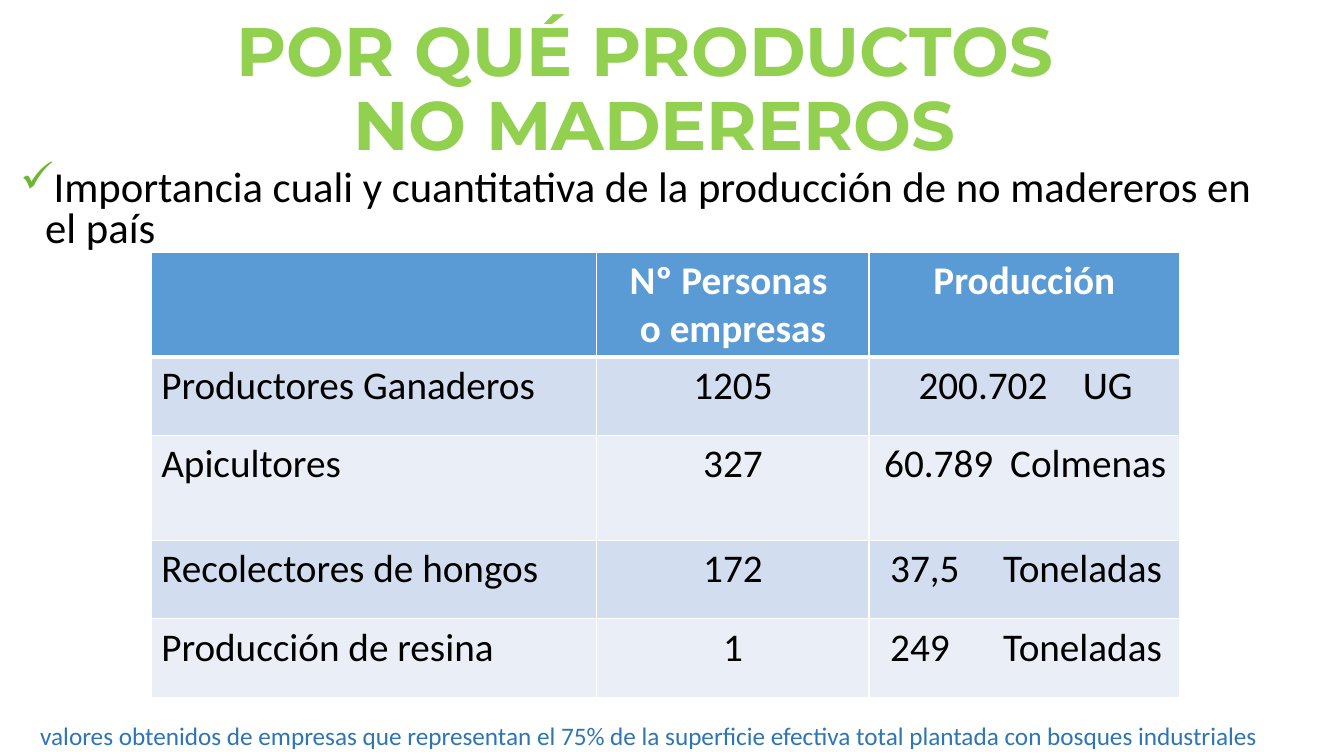
from dataclasses import dataclass

from lxml import etree
from pptx import Presentation
from pptx import util as u
from pptx.dml.color import RGBColor
from pptx.enum import text
from pptx.oxml import ns

PX = 9144

WHITE = RGBColor(0xFF, 0xFF, 0xFF)
BLACK = RGBColor(0x00, 0x00, 0x00)
LIME = RGBColor(0x92, 0xD0, 0x50)
CHECK_GREEN = RGBColor(0x6F, 0xB6, 0x34)
NOTE_BLUE = RGBColor(0x2E, 0x75, 0xB6)
HEADER_BLUE = RGBColor(0x5B, 0x9B, 0xD5)
BANDS = (RGBColor(0xD2, 0xDE, 0xEF), RGBColor(0xEA, 0xEF, 0xF7))


@dataclass(frozen=True)
class Style:
    size: float
    color: RGBColor
    font: str = "Calibri"
    bold: bool = False


@dataclass(frozen=True)
class Block:
    left: int
    top: int
    width: int
    height: int
    lines: tuple[str, ...]
    style: Style
    spacing: float = 1.0
    align: text.PP_ALIGN = text.PP_ALIGN.LEFT
    anchor: text.MSO_ANCHOR = text.MSO_ANCHOR.TOP


@dataclass(frozen=True)
class Producer:
    name: str
    count: str
    amount: str
    unit: str
    amount_left: int
    unit_left: int
    height: int = 78


HEADER_STYLE = Style(28, WHITE, bold=True)
BODY_STYLE = Style(28, BLACK)

TITLE = Block(74, 18, 1150, 145, ("POR QUÉ PRODUCTOS ", "NO MADEREROS"),
              Style(49, LIME, "Montserrat", True), 0.9,
              text.PP_ALIGN.CENTER, text.MSO_ANCHOR.MIDDLE)
IMPORTANCE = Block(10, 163, 1249, 142,
                   ("Importancia cuali y cuantitativa de la producción de no madereros en el país",),
                   Style(30.5, BLACK), 0.8)
NOTE = Block(30, 710, 1261, 40,
             ("valores obtenidos de empresas que representan el 75% de la superficie "
              "efectiva total plantada con bosques industriales",),
             Style(18, NOTE_BLUE))

COLUMN_WIDTHS = (442, 270, 308)
HEADER_HEIGHT = 104
HEADERS = ((), ("Nº Personas ", "o empresas"), ("Producción",))
PRODUCERS = (
    Producer("Productores Ganaderos", "1205", "200.702", "UG", 39, 202),
    Producer("Apicultores", "327", "60.789", "Colmenas", 5, 130, 104),
    Producer("Recolectores de hongos", "172", "37,5", "Toneladas", 11, 123),
    Producer("Producción de resina", "1", "249", "Toneladas", 11, 123),
)


def add_run(paragraph, content: str, style: Style) -> None:
    run = paragraph.add_run()
    run.text = content
    run.font.name = style.font
    run.font.size = u.Pt(style.size)
    run.font.bold = style.bold
    run.font.color.rgb = style.color


def add_block(slide, block: Block):
    shape = slide.shapes.add_textbox(block.left * PX, block.top * PX,
                                     block.width * PX, block.height * PX)
    frame = shape.text_frame
    frame.word_wrap = True
    frame.vertical_anchor = block.anchor
    paragraph = frame.paragraphs[0]
    paragraph.alignment = block.align
    paragraph.line_spacing = block.spacing
    for index, line in enumerate(block.lines):
        if index:
            paragraph.add_line_break()
        add_run(paragraph, line, block.style)
    return paragraph


def hang(paragraph, left: int, first: int) -> None:
    properties = paragraph._p.get_or_add_pPr()
    properties.set("marL", str(left * PX))
    properties.set("indent", str((first - left) * PX))


def add_check(paragraph) -> None:
    hang(paragraph, 25, 0)
    properties = paragraph._p.get_or_add_pPr()
    color = etree.SubElement(properties, ns.qn("a:buClr"))
    etree.SubElement(color, ns.qn("a:srgbClr"), val=str(CHECK_GREEN))
    etree.SubElement(properties, ns.qn("a:buChar"), char="✓")


def set_borders(cell, top: int, bottom: int) -> None:
    properties = cell._tc.get_or_add_tcPr()
    widths = {"a:lnL": 1, "a:lnR": 1, "a:lnT": top, "a:lnB": bottom}
    for position, (tag, width) in enumerate(widths.items()):
        line = etree.Element(ns.qn(tag), w=str(u.Pt(width)))
        fill = etree.SubElement(line, ns.qn("a:solidFill"))
        etree.SubElement(fill, ns.qn("a:srgbClr"), val=str(WHITE))
        properties.insert(position, line)


def fill_cell(cell, lines: tuple[str, ...], style: Style, align: text.PP_ALIGN) -> None:
    for index, line in enumerate(lines):
        frame = cell.text_frame
        paragraph = frame.add_paragraph() if index else frame.paragraphs[0]
        paragraph.alignment = align
        add_run(paragraph, line, style)


def add_production_table(slide) -> None:
    heights = [HEADER_HEIGHT] + [producer.height for producer in PRODUCERS]
    frame = slide.shapes.add_table(len(heights), len(COLUMN_WIDTHS), 150 * PX, 250 * PX,
                                   sum(COLUMN_WIDTHS) * PX, sum(heights) * PX)
    table = frame.table
    for column, width in zip(table.columns, COLUMN_WIDTHS):
        column.width = width * PX
    for index, (row, height) in enumerate(zip(table.rows, heights)):
        row.height = height * PX
        for cell in row.cells:
            cell.fill.solid()
            cell.fill.fore_color.rgb = BANDS[(index - 1) % 2] if index else HEADER_BLUE
            set_borders(cell, 3 if index == 1 else 1, 3 if index == 0 else 1)
    for column, lines in enumerate(HEADERS):
        fill_cell(table.cell(0, column), lines, HEADER_STYLE, text.PP_ALIGN.CENTER)
    for row, producer in enumerate(PRODUCERS, start=1):
        fill_cell(table.cell(row, 0), (producer.name,), BODY_STYLE, text.PP_ALIGN.LEFT)
        fill_cell(table.cell(row, 1), (producer.count,), BODY_STYLE, text.PP_ALIGN.CENTER)
        production = table.cell(row, 2)
        fill_cell(production, (f"{producer.amount}\t{producer.unit}",),
                  BODY_STYLE, text.PP_ALIGN.LEFT)
        hang(production.text_frame.paragraphs[0], producer.unit_left, producer.amount_left)


def main() -> None:
    presentation = Presentation()
    presentation.slide_width = 1333 * PX
    presentation.slide_height = 750 * PX
    slide = presentation.slides.add_slide(presentation.slide_layouts[6])
    add_check(add_block(slide, IMPORTANCE))
    add_production_table(slide)
    add_block(slide, NOTE)
    add_block(slide, TITLE)
    presentation.save("out.pptx")


if __name__ == "__main__":
    main()
